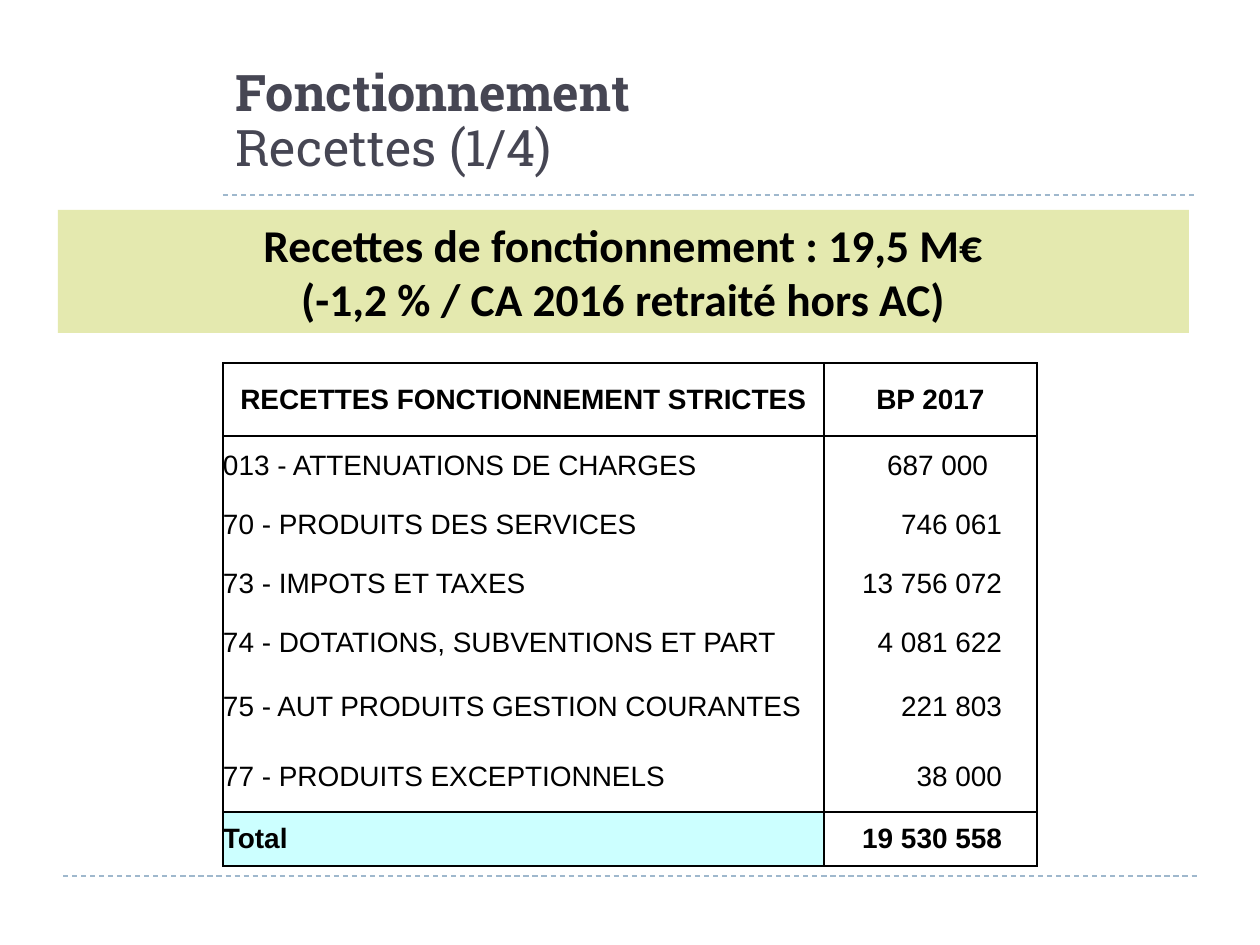
from lxml.etree import SubElement
from pptx import Presentation
from pptx.dml.color import RGBColor
from pptx.enum.dml import MSO_LINE
from pptx.enum.shapes import MSO_CONNECTOR, MSO_SHAPE
from pptx.enum.text import MSO_ANCHOR as Anchor, PP_ALIGN as Align
from pptx.oxml.ns import qn
from pptx.util import Pt

PX = 914400 / 126
BLACK = RGBColor(0, 0, 0)
WHITE = RGBColor(255, 255, 255)
SLATE = RGBColor(0x46, 0x46, 0x53)
BLUE = RGBColor(0x9F, 0xB8, 0xCD)
LIME = RGBColor(0xE4, 0xE9, 0xAF)
CYAN = RGBColor(0xCC, 0xFF, 0xFF)

ROWS = [
    ("RECETTES FONCTIONNEMENT STRICTES", "BP 2017"),
    ("013 - ATTENUATIONS DE CHARGES", "687 000"),
    ("70 - PRODUITS DES SERVICES", "746 061"),
    ("73 - IMPOTS ET TAXES", "13 756 072"),
    ("74 - DOTATIONS, SUBVENTIONS ET PART", "4 081 622"),
    ("75 - AUT PRODUITS GESTION COURANTES", "221 803"),
    ("77 - PRODUITS EXCEPTIONNELS", "38 000"),
    ("Total", "19 530 558"),
]
HIGHS = [73] + [59] * 4 + [70] * 2 + [54]
WIDES = [601, 213]


def emu(*nums):
    return [round(n * PX) for n in nums]


class Deck:
    """Draws styled elements on the current slide, measured in px."""

    def __init__(self):
        self.prs = Presentation()
        self.prs.slide_width, self.prs.slide_height = emu(1260, 945)
        self.slide = self.prs.slides.add_slide(self.prs.slide_layouts[6])
        self.shapes = self.slide.shapes

    def run(self, para, text, face, size, color, bold=False):
        run = para.add_run()
        run.text = text
        font = run.font
        font.name, font.size, font.bold = face, Pt(size), bold
        font.color.rgb = color

    def rule(self, left, right, y):
        line = self.shapes.add_connector(
            MSO_CONNECTOR.STRAIGHT, *emu(left, y, right, y))
        line.line.color.rgb = BLUE
        line.line.width = Pt(0.75)
        line.line.dash_style = MSO_LINE.DASH
        SubElement(line._element.spPr, qn("a:effectLst"))

    def title(self, box, head, sub):
        frame = self.shapes.add_textbox(*emu(*box)).text_frame
        frame.word_wrap = True
        frame.vertical_anchor = Anchor.BOTTOM
        para = frame.paragraphs[0]
        para.line_spacing = 0.92
        self.run(para, head, "Roboto Slab", 28.8, SLATE, True)
        para.add_line_break()
        self.run(para, sub, "Roboto Slab", 28.8, SLATE)

    def banner(self, box, lines):
        shape = self.shapes.add_shape(MSO_SHAPE.RECTANGLE, *emu(*box))
        shape.shadow.inherit = False
        shape.fill.solid()
        shape.fill.fore_color.rgb = LIME
        shape.line.fill.background()
        frame = shape.text_frame
        frame.word_wrap = True
        for i, text in enumerate(lines):
            para = frame.add_paragraph() if i else frame.paragraphs[0]
            para.alignment = Align.CENTER
            self.run(para, text, "Calibri", 26, BLACK, True)

    def edge(self, cell, sides):
        props = cell._tc.get_or_add_tcPr()
        for side in "LRTB":
            line = SubElement(props, qn("a:ln" + side), w=str(Pt(1)))
            if side in sides:
                fill = SubElement(line, qn("a:solidFill"))
                SubElement(fill, qn("a:srgbClr"), val=str(BLACK))
            else:
                SubElement(line, qn("a:noFill"))

    def cell(self, cell, text, align, bold, fill, sides, gap):
        cell.vertical_anchor = Anchor.MIDDLE
        cell.margin_left = cell.margin_top = cell.margin_bottom = 0
        cell.margin_right = emu(gap)[0]
        self.edge(cell, sides)
        if fill is None:
            cell.fill.background()
        else:
            cell.fill.solid()
            cell.fill.fore_color.rgb = fill
        para = cell.text_frame.paragraphs[0]
        para.alignment = align
        self.run(para, text, "Arial", 16, BLACK, bold)

    def table(self, left, top, rows, wides, highs):
        box = emu(left, top, sum(wides), sum(highs))
        grid = self.shapes.add_table(len(rows), len(wides), *box).table
        grid.first_row = grid.horz_banding = False
        for col, wide in zip(grid.columns, emu(*wides)):
            col.width = wide
        for row, high in zip(grid.rows, emu(*highs)):
            row.height = high
        last = len(rows) - 1
        for r, row in enumerate(rows):
            ends = r in (0, last)
            sides = "LR" + "T" * (ends or r == 1) + "B" * (ends or r == last - 1)
            for c, text in enumerate(row):
                align, fill, gap = Align.LEFT, None, 0
                if r == 0:
                    align = Align.CENTER
                elif c == 0:
                    fill = CYAN if r == last else WHITE
                else:
                    align, gap = Align.RIGHT, 49 if r == 1 else 35
                self.cell(grid.cell(r, c), text, align, ends, fill, sides, gap)


def main():
    deck = Deck()
    deck.rule(63, 1197, 876)
    deck.rule(223, 1197, 195)
    deck.title((223, 48, 974, 136), "Fonctionnement", "Recettes (1/4)")
    deck.banner((58, 210, 1131, 123), [
        "Recettes de fonctionnement : 19,5 M€",
        "(-1,2 % / CA 2016 retraité hors AC)",
    ])
    deck.table(223, 363, ROWS, WIDES, HIGHS)
    deck.prs.save("out.pptx")


if __name__ == "__main__":
    main()
